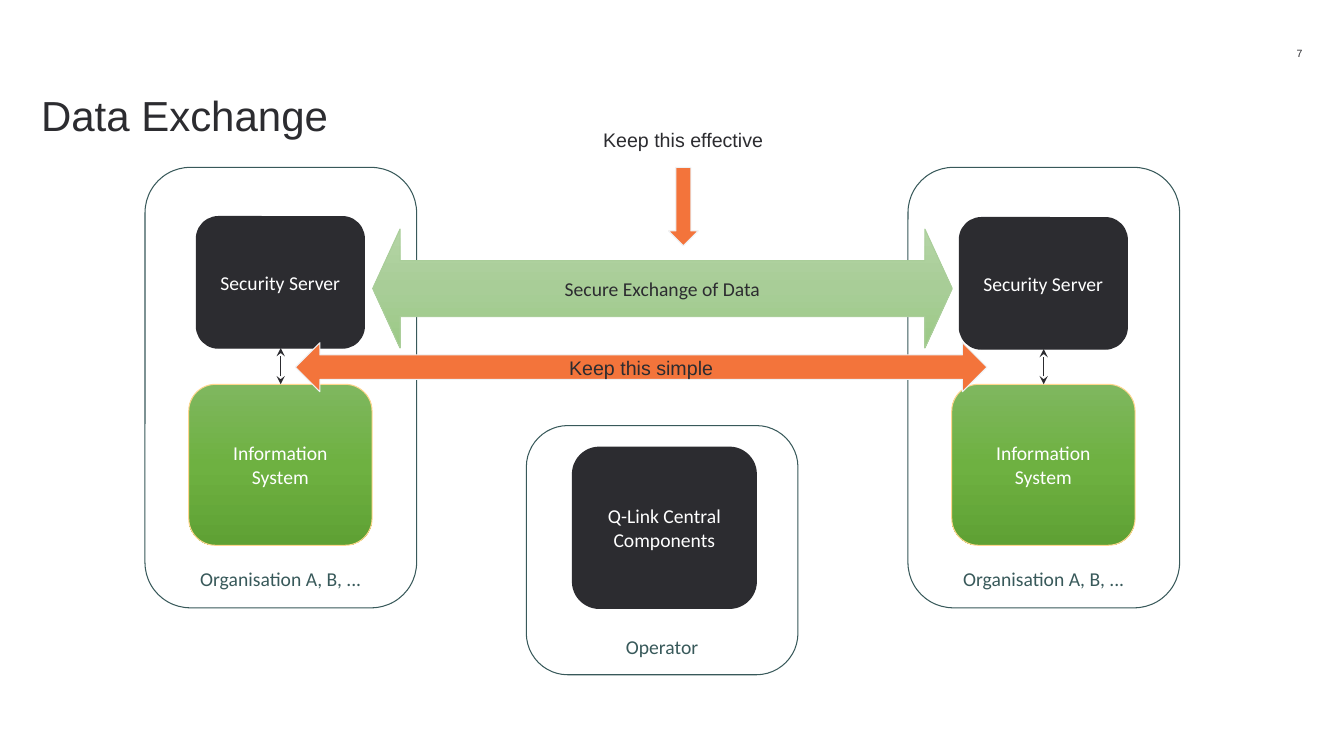
"""Build the Data Exchange slide: two organisations, an operator and the links between them."""
from copy import deepcopy

from lxml import etree
from pptx import Presentation
from pptx.dml.color import RGBColor
from pptx.enum.shapes import MSO_CONNECTOR, MSO_SHAPE as SHAPE
from pptx.enum.text import MSO_ANCHOR as ANCHOR, MSO_AUTO_SIZE, PP_ALIGN as ALIGN
from pptx.oxml.ns import qn
from pptx.util import Pt

COLORS = {
    "dark": "2C2C30",
    "white": "FFFFFF",
    "teal": "38595A",
    "orange": "F3743B",
    "pale": "EEF2F5",
    "gold": "FFD68E",
    "sage": "AACE9A",
}
GREENS = ("7FB75F", "6EB141", "5FA134")
LIGHT_GREENS = ("B4D4A5", "A8CD97", "9BC985")
ORGANISATION_SHIFT = 545


def rgb(name):
    return RGBColor.from_string(COLORS[name])


def write(s, text, color="dark", font="Calibri", size=14, align=ALIGN.CENTER,
          anchor=ANCHOR.MIDDLE, insets=(5.04, 2.88)):
    tf = s.text_frame
    tf.word_wrap = True
    tf.auto_size = MSO_AUTO_SIZE.NONE
    tf.vertical_anchor = anchor
    tf.margin_left = tf.margin_right = Pt(insets[0])
    tf.margin_top = tf.margin_bottom = Pt(insets[1])
    p = tf.paragraphs[0]
    p.text = text
    p.alignment = align
    p.font.name = font
    p.font.size = Pt(size)
    p.font.color.rgb = rgb(color)


def add_label(slide, box, text, **style):
    s = slide.shapes.add_textbox(*map(Pt, box))
    write(s, text, font="Arial", **style)


def add_block(slide, kind, box, line, fill=None, width=0.75, adjust=()):
    s = slide.shapes.add_shape(kind, *map(Pt, box))
    s.shadow.inherit = False
    for i, value in enumerate(adjust):
        s.adjustments[i] = value
    if fill:
        s.fill.solid()
        s.fill.fore_color.rgb = rgb(fill)
    else:
        s.fill.background()
    s.line.color.rgb = rgb(line)
    s.line.width = Pt(width)
    return s


def shade(s, stops):
    s.fill.gradient()
    s.fill.gradient_angle = 270
    gs_list = s._element.spPr.find(qn("a:gradFill")).find(qn("a:gsLst"))
    gs_list.append(deepcopy(gs_list[0]))
    for i, (stop, color) in enumerate(zip(s.fill.gradient_stops, stops)):
        stop.color.rgb = RGBColor.from_string(color)
        stop.position = i / 2


def add_frame(slide, box, text):
    s = add_block(slide, SHAPE.ROUNDED_RECTANGLE, box, "teal")
    write(s, text, "teal", anchor=ANCHOR.BOTTOM)


def add_dark_box(slide, box, text):
    s = add_block(slide, SHAPE.ROUNDED_RECTANGLE, box, "dark", "dark", 1)
    write(s, text, "white")


def add_link(slide, x, top, bottom):
    s = slide.shapes.add_connector(MSO_CONNECTOR.STRAIGHT, Pt(x), Pt(bottom), Pt(x), Pt(top))
    s.line.color.rgb = rgb("dark")
    s.line.width = Pt(0.75)
    ln = s.line._get_or_add_ln()
    for end in ("a:headEnd", "a:tailEnd"):
        etree.SubElement(ln, qn(end), type="stealth")
    etree.SubElement(s._element.spPr, qn("a:effectLst"))


def add_organisation(slide, dx, server_top):
    info = add_block(slide, SHAPE.ROUNDED_RECTANGLE, (134.8 + dx, 274.5, 131, 115), "gold")
    shade(info, GREENS)
    write(info, "Information System", "white")
    add_frame(slide, (103.6 + dx, 119.6, 194, 314.6), "Organisation A, B, ...")
    add_dark_box(slide, (140.4 + dx, server_top, 119.8, 93.8), "Security Server")
    add_link(slide, 200.5 + dx, server_top + 93.8, 274.5)


def add_title(slide, text):
    s = slide.shapes.title
    s.left, s.top, s.width, s.height = map(Pt, (29.3, 64, 901.5, 97))
    write(s, text, font="Arial", size=30, align=ALIGN.LEFT, anchor=ANCHOR.TOP, insets=(0, 0))


def main():
    prs = Presentation()
    prs.slide_width, prs.slide_height = Pt(960), Pt(540)
    slide = prs.slides.add_slide(prs.slide_layouts[5])
    add_title(slide, "Data Exchange")
    add_label(slide, (902.2, 29.5, 28.1, 17.3), "7", size=7.5, align=ALIGN.RIGHT, insets=(0, 0))

    add_organisation(slide, 0, 154.8)
    add_organisation(slide, ORGANISATION_SHIFT, 155.5)
    exchange = add_block(slide, SHAPE.LEFT_RIGHT_ARROW, (266.2, 163.6, 414, 85), "sage",
                         adjust=(0.47, 0.23))
    shade(exchange, LIGHT_GREENS)
    write(exchange, "Secure Exchange of Data")

    add_frame(slide, (376, 304, 194, 178), "Operator")
    add_dark_box(slide, (409, 319.5, 131.2, 115), "Q-Link Central Components")

    add_label(slide, (406, 88.6, 164, 23), "Keep this effective", insets=(7.2, 7.2))
    add_block(slide, SHAPE.DOWN_ARROW, (477.5, 119.6, 21.3, 56), "pale", "orange")
    simple = add_block(slide, SHAPE.LEFT_RIGHT_ARROW, (211, 244.8, 494, 35), "pale", "orange")
    write(simple, "Keep this simple", font="Arial", insets=(7.2, 7.2))
    prs.save("out.pptx")


if __name__ == "__main__":
    main()
